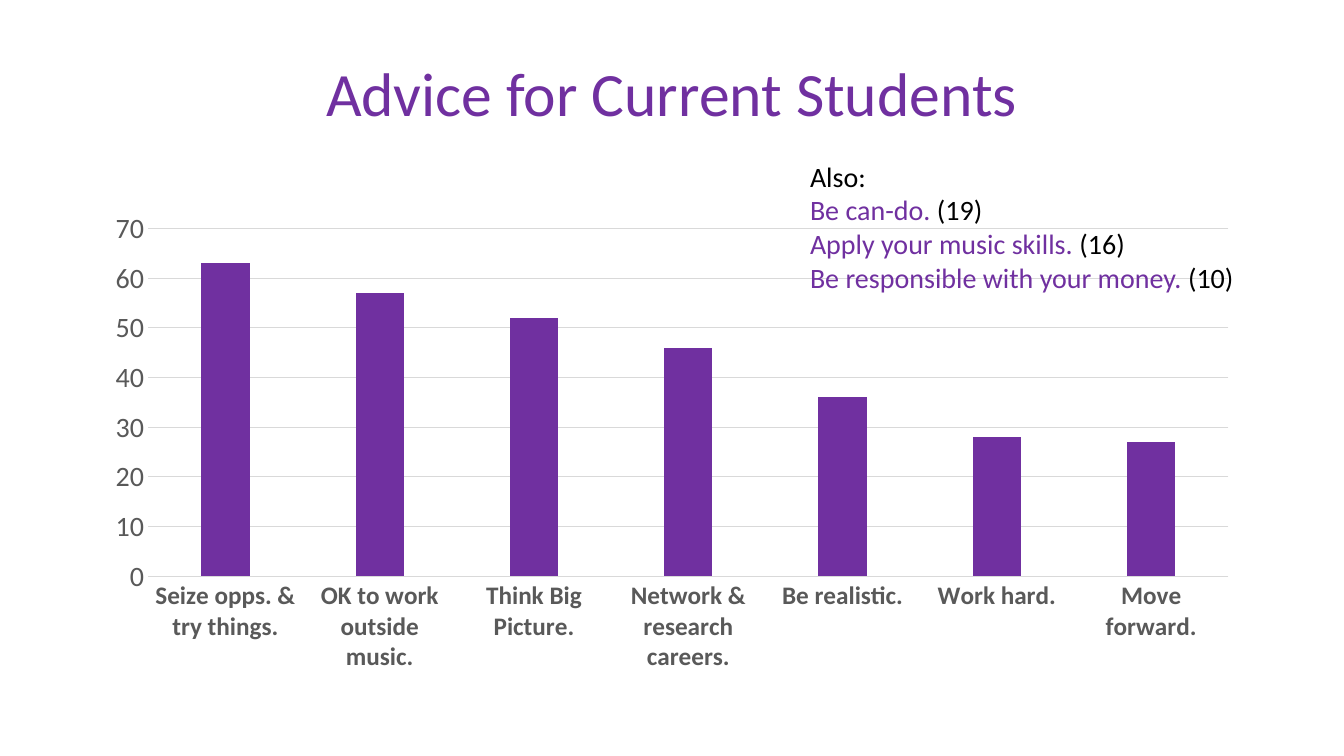
from dataclasses import dataclass

from pptx import Presentation
from pptx import util as u
from pptx.chart.data import CategoryChartData
from pptx.dml.color import RGBColor
from pptx.enum import chart as ch
from pptx.enum import text as t

PX = 9525  # EMU in one px, 96 px to the inch
FONT = "Calibri"
HUES = {"purple": "7030A0", "black": "000000", "grey": "595959", "rule": "D9D9D9"}


@dataclass
class Box:
    left: int
    top: int
    wide: int
    high: int

    def emu(self) -> list[int]:
        return [n * PX for n in (self.left, self.top, self.wide, self.high)]


@dataclass
class Advice:
    label: str
    count: int


TITLE = Box(88, 38, 1104, 108)
PLOT = Box(88, 192, 1104, 457)
NOTE = Box(762, 147, 457, 139)

MAIN = [
    Advice("Seize opps. & try things.", 63),
    Advice("OK to work outside music.", 57),
    Advice("Think Big Picture.", 52),
    Advice("Network & research careers.", 46),
    Advice("Be realistic.", 36),
    Advice("Work hard.", 28),
    Advice("Move forward.", 27),
]
ALSO = [
    Advice("Be can-do.", 19),
    Advice("Apply your music skills.", 16),
    Advice("Be responsible with your money.", 10),
]


def hue(name: str) -> RGBColor:
    return RGBColor.from_string(HUES[name])


def style(font, size: int, color: str, bold: bool = False) -> None:
    font.name, font.size, font.bold = FONT, u.Pt(size), bold
    font.color.rgb = hue(color)


def rule(line) -> None:
    line.color.rgb = hue("rule")
    line.width = u.Pt(0.75)


def write(slide, box: Box, lines: list, size: int, align=t.PP_ALIGN.LEFT,
          anchor=t.MSO_ANCHOR.TOP, space: float = 1.0) -> None:
    """Add a text box; each line is a list of (text, color) runs."""
    frame = slide.shapes.add_textbox(*box.emu()).text_frame
    frame.word_wrap = True
    frame.vertical_anchor = anchor
    for i, line in enumerate(lines):
        para = frame.add_paragraph() if i else frame.paragraphs[0]
        para.alignment, para.line_spacing = align, space
        for words, color in line:
            run = para.add_run()
            run.text = words
            style(run.font, size, color)


def draw(slide, box: Box, items: list[Advice]) -> None:
    """Add the column chart."""
    data = CategoryChartData()
    data.categories = [item.label for item in items]
    data.add_series("Series 1", [item.count for item in items])
    kind = ch.XL_CHART_TYPE.COLUMN_CLUSTERED
    chart = slide.shapes.add_chart(kind, *box.emu(), data).chart
    chart.has_legend = chart.has_title = False
    style(chart.font, 10, "black")

    # Columns
    plot = chart.plots[0]
    plot.gap_width, plot.overlap, plot.vary_by_categories = 219, -27, False
    fill = plot.series[0].format.fill
    fill.solid()
    fill.fore_color.rgb = hue("purple")

    # Axes
    cat, val = chart.category_axis, chart.value_axis
    for axis in (cat, val):
        axis.major_tick_mark = axis.minor_tick_mark = ch.XL_TICK_MARK.NONE
    style(cat.tick_labels.font, 18, "grey", bold=True)
    style(val.tick_labels.font, 20, "grey")
    rule(cat.format.line)
    val.format.line.fill.background()
    val.minimum_scale, val.maximum_scale, val.major_unit = 0, 70, 10
    val.has_major_gridlines = True
    rule(val.major_gridlines.format.line)


def main() -> None:
    deck = Presentation()
    deck.slide_width, deck.slide_height = 1280 * PX, 720 * PX
    slide = deck.slides.add_slide(deck.slide_layouts[6])

    # Title
    write(slide, TITLE, [[("Advice for Current Students", "purple")]], 44,
          align=t.PP_ALIGN.CENTER, anchor=t.MSO_ANCHOR.MIDDLE, space=0.9)

    # Chart, with the lesser advice over its corner
    draw(slide, PLOT, MAIN)
    rows = [[(f"{a.label} ", "purple"), (f"({a.count})", "black")] for a in ALSO]
    write(slide, NOTE, [[("Also:", "black")], *rows], 20)

    deck.save("out.pptx")


if __name__ == "__main__":
    main()
